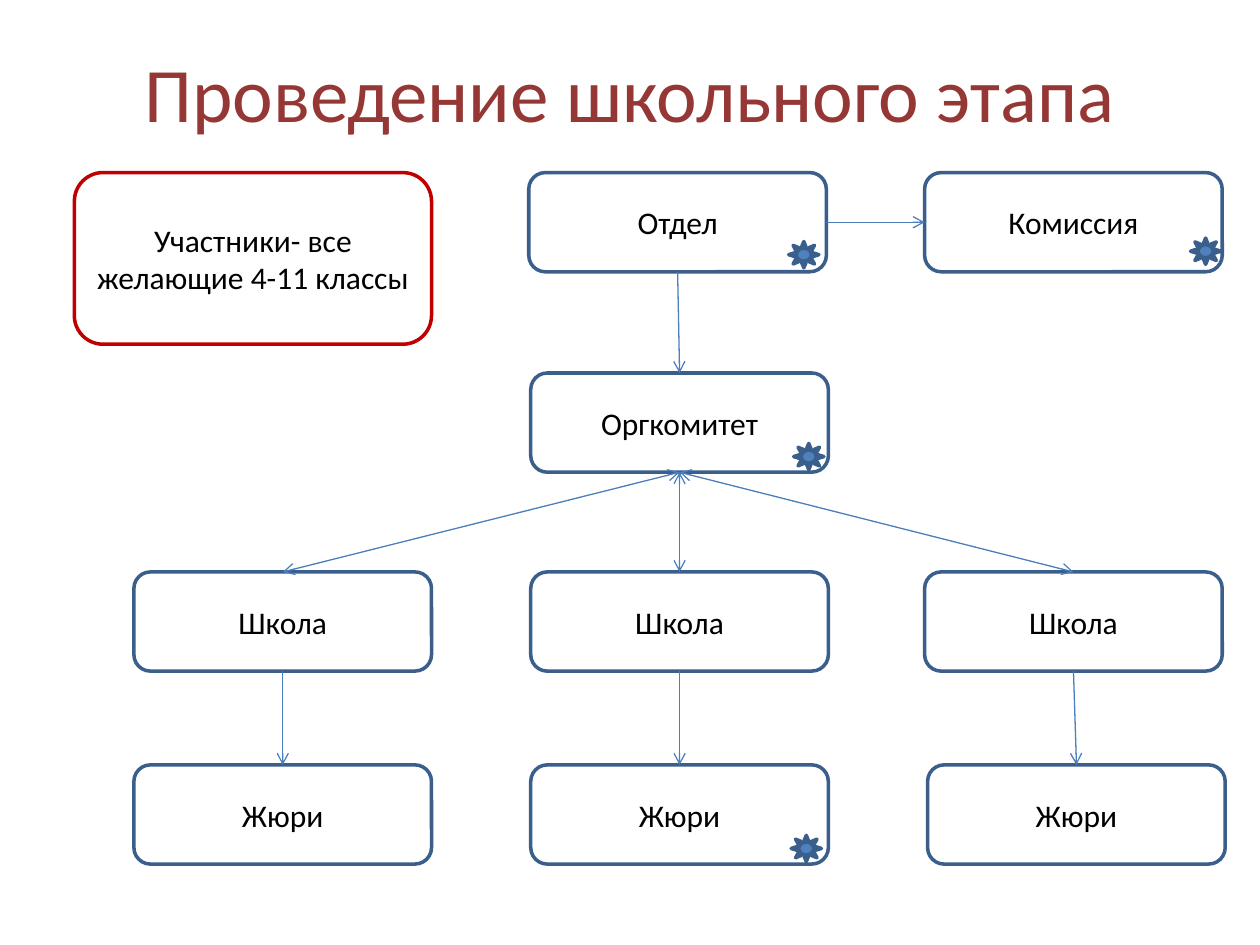
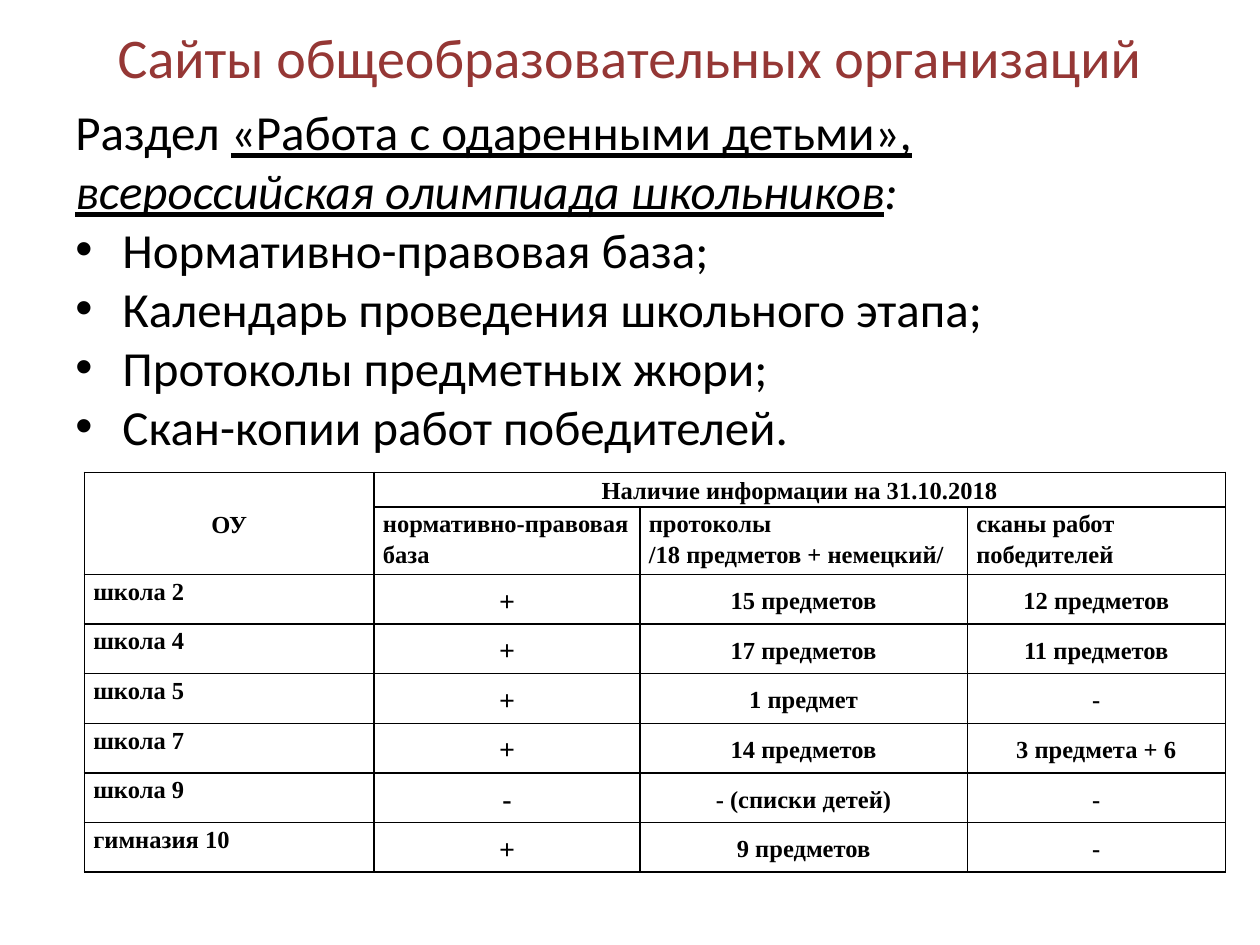
from dataclasses import dataclass
from typing import NamedTuple

from lxml import etree
from pptx import Presentation
from pptx.dml.color import RGBColor
from pptx.enum.shapes import MSO_CONNECTOR, MSO_SHAPE
from pptx.enum.text import MSO_ANCHOR, PP_ALIGN
from pptx.oxml.ns import qn
from pptx.util import Cm, Pt

ROUNDED, SUN = MSO_SHAPE.ROUNDED_RECTANGLE, MSO_SHAPE.SUN
STRAIGHT = MSO_CONNECTOR.STRAIGHT
LEFT, CENTER = PP_ALIGN.LEFT, PP_ALIGN.CENTER
TOP, MIDDLE = MSO_ANCHOR.TOP, MSO_ANCHOR.MIDDLE
SITE_TOP, SITE_LEFT, SITE_BOTTOM, SITE_RIGHT = range(4)


@dataclass(frozen=True)
class Theme:
    title: str = "953735"
    text: str = "000000"
    outline: str = "3A5F8C"
    accent: str = "C00000"
    arrow: str = "4B7EBC"
    sun: str = "4F81BD"
    font: str = "Calibri"
    table_font: str = "Times New Roman"
    title_size: float = 44
    small_title_size: float = 32
    body_size: float = 28
    box_size: float = 18
    mark_size: float = 16
    table_size: float = 14
    outline_width: float = 2
    arrow_width: float = 0.75
    border_width: float = 1


THEME = Theme()


class Box(NamedTuple):
    text: str
    left: float
    top: float
    width: float = 6.0
    height: float = 2.0
    color: str = THEME.outline


class Arrow(NamedTuple):
    start: str
    start_site: int
    end: str
    end_site: int
    two_way: bool = False


# Flow chart of the school stage, in centimetres
COLUMNS = (2.7, 10.7, 18.64)
ROWS = (3.48, 7.52, 11.53, 15.42)
BOXES = {
    "department": Box("Отдел", 10.66, ROWS[0]),
    "commission": Box("Комиссия", COLUMNS[2], ROWS[0]),
    "committee": Box("Оргкомитет", COLUMNS[1], ROWS[1]),
    **{f"school {i}": Box("Школа", left, ROWS[2]) for i, left in enumerate(COLUMNS)},
    **{f"jury {i}": Box("Жюри", left, ROWS[3])
       for i, left in enumerate((*COLUMNS[:2], 18.7))},
    "participants": Box("Участники- все желающие 4-11 классы", 1.5, ROWS[0],
                        7.2, 3.46, THEME.accent),
}
ARROWS = [
    Arrow("department", SITE_RIGHT, "commission", SITE_LEFT),
    Arrow("department", SITE_BOTTOM, "committee", SITE_TOP),
    *(Arrow("committee", SITE_BOTTOM, f"school {i}", SITE_TOP, True) for i in range(3)),
    *(Arrow(f"school {i}", SITE_BOTTOM, f"jury {i}", SITE_TOP) for i in range(3)),
]
SUNS = [(15.9, 4.87), (24.0, 4.8), (15.95, 16.84), (16.0, 8.94)]

# Website content and its check by school
SECTIONS = ["Нормативно-правовая база;", "Календарь проведения школьного этапа;",
            "Протоколы предметных жюри;", "Скан-копии работ победителей."]
HEADINGS = ["нормативно-правовая база", "протоколы\n/18 предметов + немецкий/",
            "сканы работ победителей"]
SCHOOLS = [
    ("школа 2", "+", "15 предметов", "12 предметов"),
    ("школа 4", "+", "17 предметов", "11 предметов"),
    ("школа 5", "+", "1 предмет", "-"),
    ("школа 7", "+", "14 предметов", "3 предмета + 6"),
    ("школа 9", "-", "- (списки детей)", "-"),
    ("гимназия 10", "+", "9 предметов", "-"),
]
COLUMN_WIDTHS = (5.84, 5.36, 6.6, 5.2)
ROW_HEIGHTS = (0.7, 1.3) + (1.0,) * len(SCHOOLS)


def write(paragraph, text: str, *, size: float, font: str = THEME.font,
          color: str = THEME.text, bold: bool = False, italic: bool = False,
          underline: bool = False, align=LEFT, spacing: float = 1.0) -> None:
    """Add one formatted run and set the paragraph's layout."""
    paragraph.alignment = align
    paragraph.line_spacing = spacing
    run = paragraph.add_run()
    run.text = text
    run.font.size = Pt(size)
    run.font.name = font
    run.font.color.rgb = RGBColor.from_string(color)
    run.font.bold, run.font.italic, run.font.underline = bold, italic, underline


def add_text_frame(slide, left: float, top: float, width: float, height: float, anchor=TOP):
    frame = slide.shapes.add_textbox(Cm(left), Cm(top), Cm(width), Cm(height)).text_frame
    frame.word_wrap = True
    frame.vertical_anchor = anchor
    return frame


def add_title(slide, text: str, top: float, height: float, size: float) -> None:
    frame = add_text_frame(slide, 1.27, top, 22.86, height, MIDDLE)
    write(frame.paragraphs[0], text, size=size, color=THEME.title, align=CENTER)


def set_line(line, color: str, width: float) -> None:
    line.color.rgb = RGBColor.from_string(color)
    line.width = Pt(width)


def add_box(slide, box: Box):
    shape = slide.shapes.add_shape(ROUNDED, Cm(box.left), Cm(box.top),
                                   Cm(box.width), Cm(box.height))
    shape.shadow.inherit = False
    shape.fill.background()
    set_line(shape.line, box.color, THEME.outline_width)
    frame = shape.text_frame
    frame.word_wrap = True
    frame.vertical_anchor = MIDDLE
    write(frame.paragraphs[0], box.text, size=THEME.box_size, align=CENTER)
    return shape


def add_arrow(slide, arrow: Arrow, shapes: dict) -> None:
    connector = slide.shapes.add_connector(STRAIGHT, 0, 0, 0, 0)
    connector.begin_connect(shapes[arrow.start], arrow.start_site)
    connector.end_connect(shapes[arrow.end], arrow.end_site)
    set_line(connector.line, THEME.arrow, THEME.arrow_width)
    line = connector.line._get_or_add_ln()
    for end in ("a:headEnd", "a:tailEnd") if arrow.two_way else ("a:tailEnd",):
        etree.SubElement(line, qn(end), type="arrow")
    etree.SubElement(connector._element.spPr, qn("a:effectLst"))


def add_sun(slide, left: float, top: float) -> None:
    sun = slide.shapes.add_shape(SUN, Cm(left), Cm(top), Cm(0.61), Cm(0.53))
    sun.shadow.inherit = False
    sun.fill.solid()
    sun.fill.fore_color.rgb = RGBColor.from_string(THEME.sun)
    set_line(sun.line, THEME.outline, THEME.outline_width)


def add_bullet(paragraph) -> None:
    properties = paragraph._p.get_or_add_pPr()
    properties.set("marL", str(Cm(0.95)))
    properties.set("indent", str(-Cm(0.95)))
    etree.SubElement(properties, qn("a:buFont"), typeface="Arial")
    etree.SubElement(properties, qn("a:buChar"), char="•")


def style_cell(cell) -> None:
    """Clear the fill and draw all four borders."""
    cell.fill.background()
    cell.margin_left = cell.margin_right = Cm(0.18)
    cell.margin_top = cell.margin_bottom = 0
    properties = cell._tc.get_or_add_tcPr()
    for position, side in enumerate(("a:lnL", "a:lnR", "a:lnT", "a:lnB")):
        border = etree.Element(qn(side), w=str(Pt(THEME.border_width)))
        fill = etree.SubElement(border, qn("a:solidFill"))
        etree.SubElement(fill, qn("a:srgbClr"), val=THEME.text)
        properties.insert(position, border)


def fill_cell(cell, text: str, centered: bool, size: float = THEME.table_size) -> None:
    cell.vertical_anchor = MIDDLE if centered else TOP
    for i, line in enumerate(text.split("\n")):
        paragraph = cell.text_frame.add_paragraph() if i else cell.text_frame.paragraphs[0]
        write(paragraph, line, size=size, font=THEME.table_font, bold=True,
              align=CENTER if centered else LEFT, spacing=1.15)


def add_school_table(slide) -> None:
    table = slide.shapes.add_table(
        len(ROW_HEIGHTS), len(COLUMN_WIDTHS), Cm(1.7), Cm(9.52),
        Cm(sum(COLUMN_WIDTHS)), Cm(sum(ROW_HEIGHTS))).table
    table.first_row = table.horz_banding = False
    for column, width in zip(table.columns, COLUMN_WIDTHS):
        column.width = Cm(width)
    for row, height in zip(table.rows, ROW_HEIGHTS):
        row.height = Cm(height)
    for cell in table.iter_cells():
        style_cell(cell)

    # Two-level header
    table.cell(0, 0).merge(table.cell(1, 0))
    table.cell(0, 1).merge(table.cell(0, 3))
    fill_cell(table.cell(0, 0), "ОУ", True)
    fill_cell(table.cell(0, 1), "Наличие информации на 31.10.2018", True)
    for column, heading in enumerate(HEADINGS, 1):
        fill_cell(table.cell(1, column), heading, False)

    # One row per school
    for row, school in enumerate(SCHOOLS, 2):
        for column, value in enumerate(school):
            size = THEME.mark_size if column == 1 else THEME.table_size
            fill_cell(table.cell(row, column), value, column > 0, size)


def build_stage_slide(slide) -> None:
    add_title(slide, "Проведение школьного этапа", 0.76, 2.16, THEME.title_size)
    shapes = {key: add_box(slide, box) for key, box in BOXES.items()}
    for arrow in ARROWS:
        add_arrow(slide, arrow, shapes)
    for left, top in SUNS:
        add_sun(slide, left, top)


def build_sites_slide(slide) -> None:
    add_title(slide, "Сайты общеобразовательных организаций", 0.33, 1.6,
              THEME.small_title_size)
    body = add_text_frame(slide, 1.27, 1.93, 22.86, 7.4)
    intro = body.paragraphs[0]
    size = THEME.body_size
    write(intro, "Раздел ", size=size)
    write(intro, "«Работа с одаренными детьми», ", size=size, underline=True)
    write(intro, "всероссийская олимпиада школьников", size=size, italic=True, underline=True)
    write(intro, ":", size=size, italic=True)
    for section in SECTIONS:
        paragraph = body.add_paragraph()
        write(paragraph, section, size=size)
        add_bullet(paragraph)
    add_school_table(slide)


def main() -> None:
    deck = Presentation()
    deck.slide_width, deck.slide_height = Cm(25.4), Cm(19.05)
    blank = deck.slide_layouts[6]
    for build in (build_stage_slide, build_sites_slide):
        build(deck.slides.add_slide(blank))
    deck.save("out.pptx")


if __name__ == "__main__":
    main()
